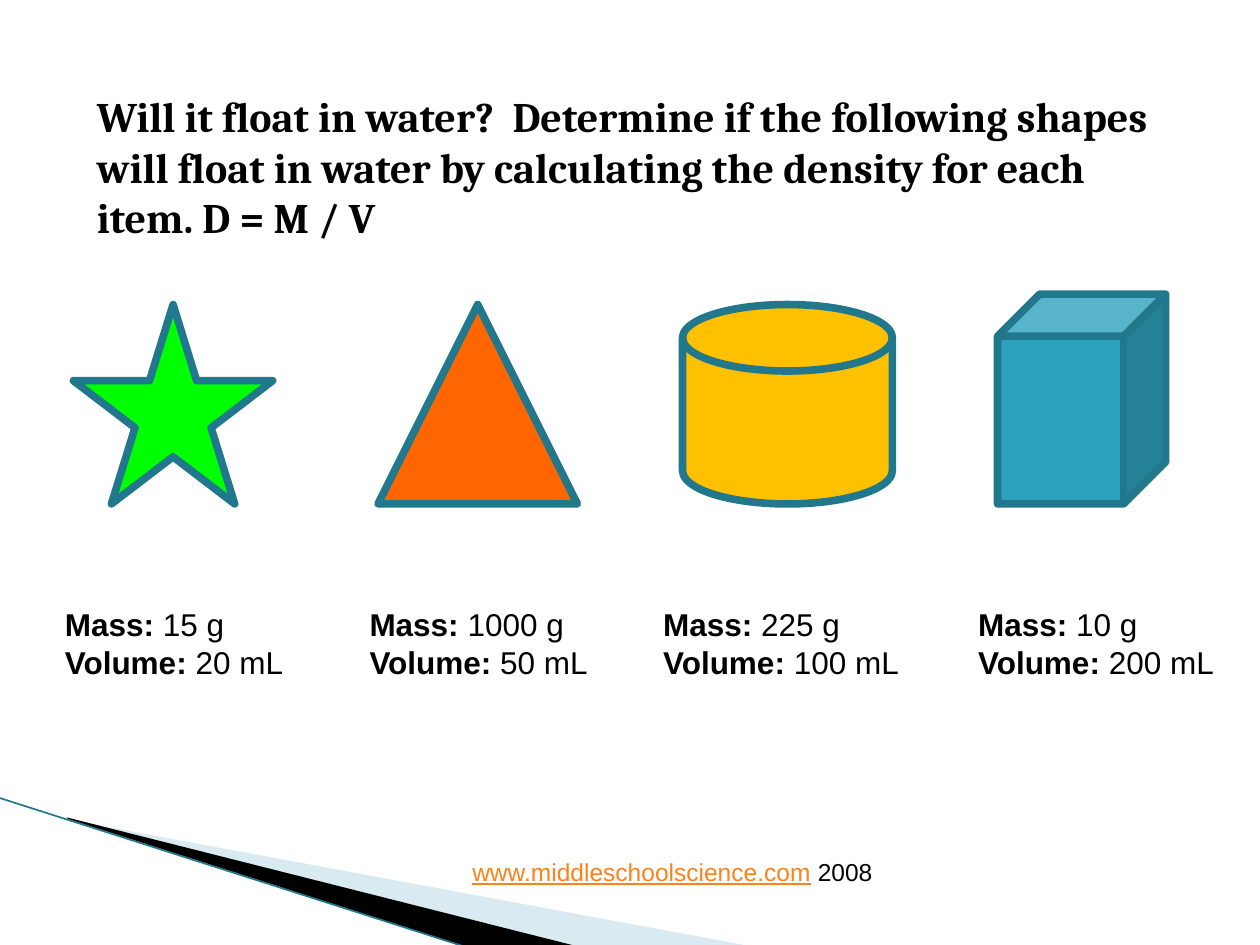
from dataclasses import dataclass

from lxml import etree
from pptx import Presentation
from pptx.dml.color import RGBColor
from pptx.enum.shapes import MSO_CONNECTOR, MSO_SHAPE
from pptx.enum.text import MSO_ANCHOR, MSO_AUTO_SIZE, PP_ALIGN
from pptx.oxml.ns import qn
from pptx.util import Cm, Pt

STAR = MSO_SHAPE.STAR_5_POINT
TRIANGLE = MSO_SHAPE.ISOSCELES_TRIANGLE
CYLINDER = MSO_SHAPE.FLOWCHART_MAGNETIC_DISK
CUBE = MSO_SHAPE.CUBE
STRAIGHT = MSO_CONNECTOR.STRAIGHT
LEFT, CENTER = PP_ALIGN.LEFT, PP_ALIGN.CENTER
TITLE_ONLY = 5


@dataclass(frozen=True)
class Theme:
    black: str = "000000"
    outline: str = "21788D"
    pale_blue: str = "A0CBDC"
    link: str = "FF8119"
    green: str = "00FF00"
    orange: str = "FF6600"
    gold: str = "FFC000"
    teal: str = "2DA2BF"
    heading_font: str = "Cambria"
    body_font: str = "Arial"
    heading_size: int = 24
    label_size: int = 18
    footer_size: int = 14


THEME = Theme()

QUESTION = (
    "Will it float in water?  Determine if the following shapes will float "
    "in water by calculating the density for each item. D = M / V"
)

# Solid, fill, (left, top, width, height), label (left, width), mass, volume
ITEMS = [
    (STAR, THEME.green, (1.48, 6.14, 4.02, 4.02), (1.06, 5.08), "15 g", "20 mL"),
    (TRIANGLE, THEME.orange, (7.62, 6.14, 4.02, 4.02), (7.2, 5.08), "1000 g", "50 mL"),
    (CYLINDER, THEME.gold, (13.76, 6.14, 4.23, 4.02), (13.12, 5.5), "225 g", "100 mL"),
    (CUBE, THEME.teal, (20.11, 5.93, 3.39, 4.23), (19.47, 5.29), "10 g", "200 mL"),
]

# Corner wedges: fill, opacity in percent, corner points
WEDGES = [
    (THEME.pale_blue, 40, [(1.4, 16.53), (15.11, 19.07), (11.58, 19.07), (1.4, 16.51)]),
    (THEME.black, 100, [(1.35, 16.48), (11.61, 19.07), (9.45, 19.1), (1.37, 16.51)]),
]


def rgb(color):
    return RGBColor.from_string(color)


def add_run(paragraph, text, *, size, color=THEME.black, font=THEME.body_font,
            bold=False, underline=False):
    run = paragraph.add_run()
    run.text = text
    run.font.name = font
    run.font.size = Pt(size)
    run.font.bold = bold
    run.font.underline = underline
    run.font.color.rgb = rgb(color)


def write_text(shape, lines, *, alignment=LEFT, **defaults):
    """Fill a shape with lines, each a list of (text, format changes)."""
    frame = shape.text_frame
    frame.word_wrap = True
    frame.auto_size = MSO_AUTO_SIZE.NONE
    frame.vertical_anchor = MSO_ANCHOR.TOP
    for index, runs in enumerate(lines):
        paragraph = frame.add_paragraph() if index else frame.paragraphs[0]
        paragraph.alignment = alignment
        for text, changes in runs:
            add_run(paragraph, text, **{**defaults, **changes})


def add_text_box(slide, box, lines, **text_format):
    shape = slide.shapes.add_textbox(*map(Cm, box))
    write_text(shape, lines, **text_format)


def set_title(slide):
    title = slide.shapes.title
    title.left, title.top, title.width, title.height = map(Cm, (1.7, 1.7, 22.23, 3.33))
    write_text(title, [[(QUESTION, {})]], size=THEME.heading_size,
               font=THEME.heading_font, bold=True)


def add_wedge(slide, fill, opacity, points):
    corners = [(Cm(x), Cm(y)) for x, y in points]
    builder = slide.shapes.build_freeform(*corners[0])
    builder.add_line_segments(corners[1:], close=True)
    wedge = builder.convert_to_shape()
    wedge.shadow.inherit = False
    wedge.fill.solid()
    wedge.fill.fore_color.rgb = rgb(fill)
    wedge.line.fill.background()
    if opacity < 100:
        color = wedge.fill._xPr.find(".//" + qn("a:srgbClr"))
        etree.SubElement(color, qn("a:alpha"), val=str(opacity * 1000))


def add_corner_line(slide):
    line = slide.shapes.add_connector(
        STRAIGHT, Cm(-0.03), Cm(16.08), Cm(9.42), Cm(19.1))
    line.line.color.rgb = rgb(THEME.outline)
    line.line.width = Pt(0.95)
    etree.SubElement(line._element.spPr, qn("a:effectLst"))


def add_solid(slide, kind, fill, box):
    solid = slide.shapes.add_shape(kind, *map(Cm, box))
    solid.shadow.inherit = False
    solid.fill.solid()
    solid.fill.fore_color.rgb = rgb(fill)
    solid.line.color.rgb = rgb(THEME.outline)
    solid.line.width = Pt(4.33)
    etree.SubElement(solid.line._get_or_add_ln(), qn("a:round"))


def add_measurements(slide, left, width, mass, volume):
    lines = [
        [("Mass: ", {"bold": True}), (mass, {})],
        [("Volume:", {"bold": True}), (f" {volume}", {})],
    ]
    add_text_box(slide, (left, 12.07, width, 1.8), lines, size=THEME.label_size)


def main():
    presentation = Presentation()
    presentation.slide_width = Cm(25.4)
    presentation.slide_height = Cm(19.05)
    slide = presentation.slides.add_slide(presentation.slide_layouts[TITLE_ONLY])

    for wedge in WEDGES:
        add_wedge(slide, *wedge)
    add_corner_line(slide)
    set_title(slide)
    for kind, fill, box, label, mass, volume in ITEMS:
        add_solid(slide, kind, fill, box)
        add_measurements(slide, *label, mass, volume)

    footer = [("www.middleschoolscience.com",
               {"color": THEME.link, "underline": True}), (" 2008", {})]
    add_text_box(slide, (6.99, 17.15, 13.13, 0.86), [footer],
                 alignment=CENTER, size=THEME.footer_size)
    presentation.save("out.pptx")


if __name__ == "__main__":
    main()
